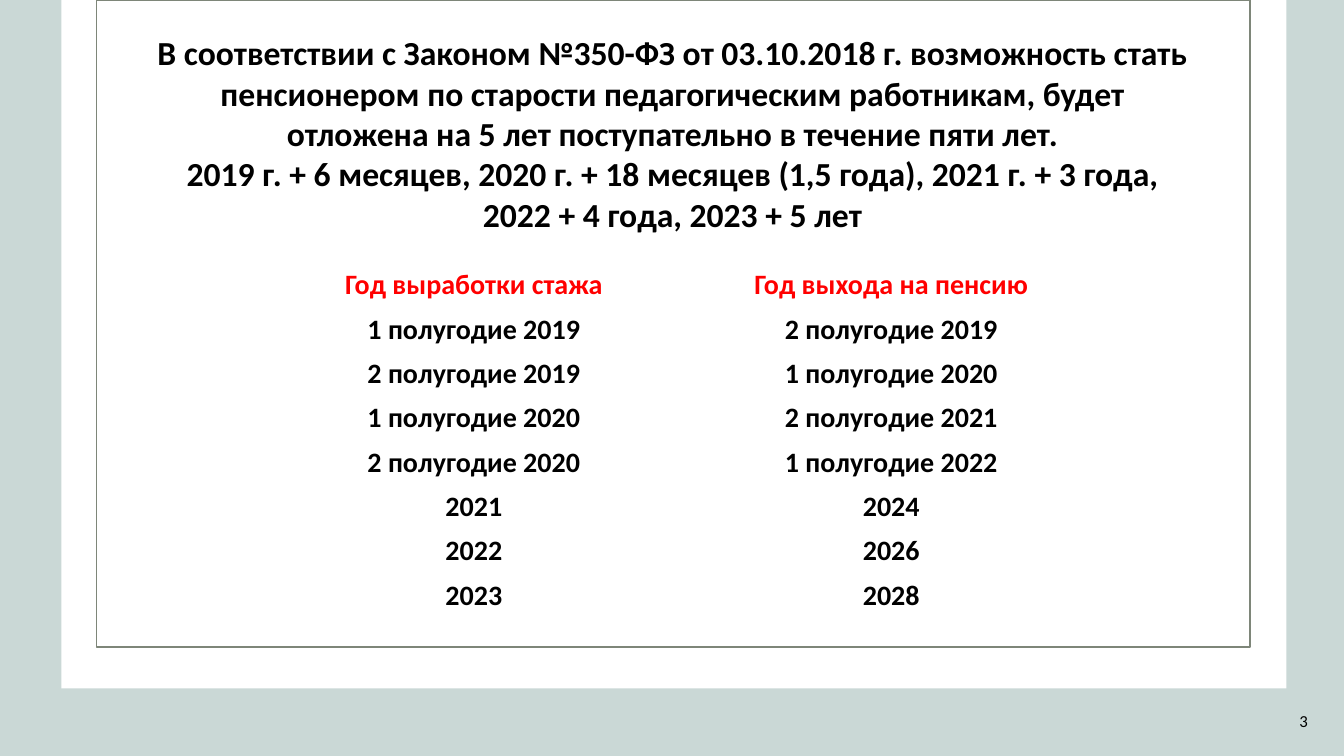
"""Build the slide on the shift of pension years for teaching staff."""
from pptx import Presentation
from pptx.dml.color import RGBColor
from pptx.enum.shapes import MSO_SHAPE
from pptx.enum.text import MSO_ANCHOR, MSO_AUTO_SIZE, PP_ALIGN
from pptx.util import Inches, Pt

BACKGROUND = RGBColor(0xCA, 0xD8, 0xD6)
FRAME_LINE = RGBColor(0x7E, 0x86, 0x79)
WHITE = RGBColor(0xFF, 0xFF, 0xFF)
BLACK = RGBColor(0x00, 0x00, 0x00)
RED = RGBColor(0xFF, 0x00, 0x00)
FONT = "Calibri"
ROW_HEIGHT = 0.44
COLUMN_WIDTHS = (4.12, 4.16)

TITLE = (
    "В соответствии с Законом №350-ФЗ от 03.10.2018 г. возможность стать "
    "пенсионером по старости педагогическим работникам, будет отложена "
    "на 5 лет поступательно в течение пяти лет.\n"
    "2019 г. + 6 месяцев, 2020 г. + 18 месяцев (1,5 года), 2021 г. + 3 года,\n"
    "2022 + 4 года, 2023 + 5 лет"
)
PENSION_YEARS = (
    ("Год выработки стажа", "Год выхода на пенсию"),
    ("1 полугодие 2019", "2 полугодие 2019"),
    ("2 полугодие 2019", "1 полугодие 2020"),
    ("1 полугодие 2020", "2 полугодие 2021"),
    ("2 полугодие 2020", "1 полугодие 2022"),
    ("2021", "2024"),
    ("2022", "2026"),
    ("2023", "2028"),
)


def box(left, top, width, height):
    return Inches(left), Inches(top), Inches(width), Inches(height)


def write(text_frame, text, size, alignment, color=BLACK, bold=False):
    text_frame.text = text
    text_frame.word_wrap = True
    for paragraph in text_frame.paragraphs:
        paragraph.alignment = alignment
        for run in paragraph.runs:
            run.font.name = FONT
            run.font.size = Pt(size)
            run.font.bold = bold
            run.font.color.rgb = color


def add_panel(slide, place, fill=None, line=None):
    panel = slide.shapes.add_shape(MSO_SHAPE.RECTANGLE, *box(*place))
    panel.shadow.inherit = False
    if fill is None:
        panel.fill.background()
    else:
        panel.fill.solid()
        panel.fill.fore_color.rgb = fill
    if line is None:
        panel.line.fill.background()
    else:
        panel.line.color.rgb = line
        panel.line.width = Pt(1)


def add_slide_number(slide, number):
    number_box = slide.shapes.add_textbox(*box(10.07, 6.95, 3, 0.4))
    number_box.text_frame.vertical_anchor = MSO_ANCHOR.MIDDLE
    write(number_box.text_frame, number, 12, PP_ALIGN.RIGHT)


def add_year_table(slide, rows):
    place = box(2.64, 2.61, sum(COLUMN_WIDTHS), ROW_HEIGHT * len(rows))
    table = slide.shapes.add_table(len(rows), len(COLUMN_WIDTHS), *place).table
    for column, width in zip(table.columns, COLUMN_WIDTHS):
        column.width = Inches(width)
    for row_index, row in enumerate(rows):
        for column_index, text in enumerate(row):
            cell = table.cell(row_index, column_index)
            cell.fill.solid()
            cell.fill.fore_color.rgb = WHITE
            cell.vertical_anchor = MSO_ANCHOR.MIDDLE
            color = BLACK if row_index else RED
            write(cell.text_frame, text, 20, PP_ALIGN.CENTER, color, True)


def place_title(slide, text):
    title = slide.shapes.title
    title.left, title.top, title.width, title.height = box(1.42, 0.27, 10.5, 2.12)
    title.text_frame.vertical_anchor = MSO_ANCHOR.TOP
    title.text_frame.auto_size = MSO_AUTO_SIZE.SHAPE_TO_FIT_TEXT
    write(title.text_frame, text, 24, PP_ALIGN.CENTER, bold=True)
    slide.shapes._spTree.append(title._element)


def main():
    presentation = Presentation()
    presentation.slide_width = Inches(13.33)
    presentation.slide_height = Inches(7.5)
    slide = presentation.slides.add_slide(presentation.slide_layouts[5])
    slide.background.fill.solid()
    slide.background.fill.fore_color.rgb = BACKGROUND
    add_panel(slide, (0.61, 0, 12.15, 6.83), fill=WHITE)
    add_panel(slide, (0.96, 0, 11.44, 6.42), line=FRAME_LINE)
    add_slide_number(slide, "3")
    add_year_table(slide, PENSION_YEARS)
    place_title(slide, TITLE)
    presentation.save("out.pptx")


if __name__ == "__main__":
    main()
